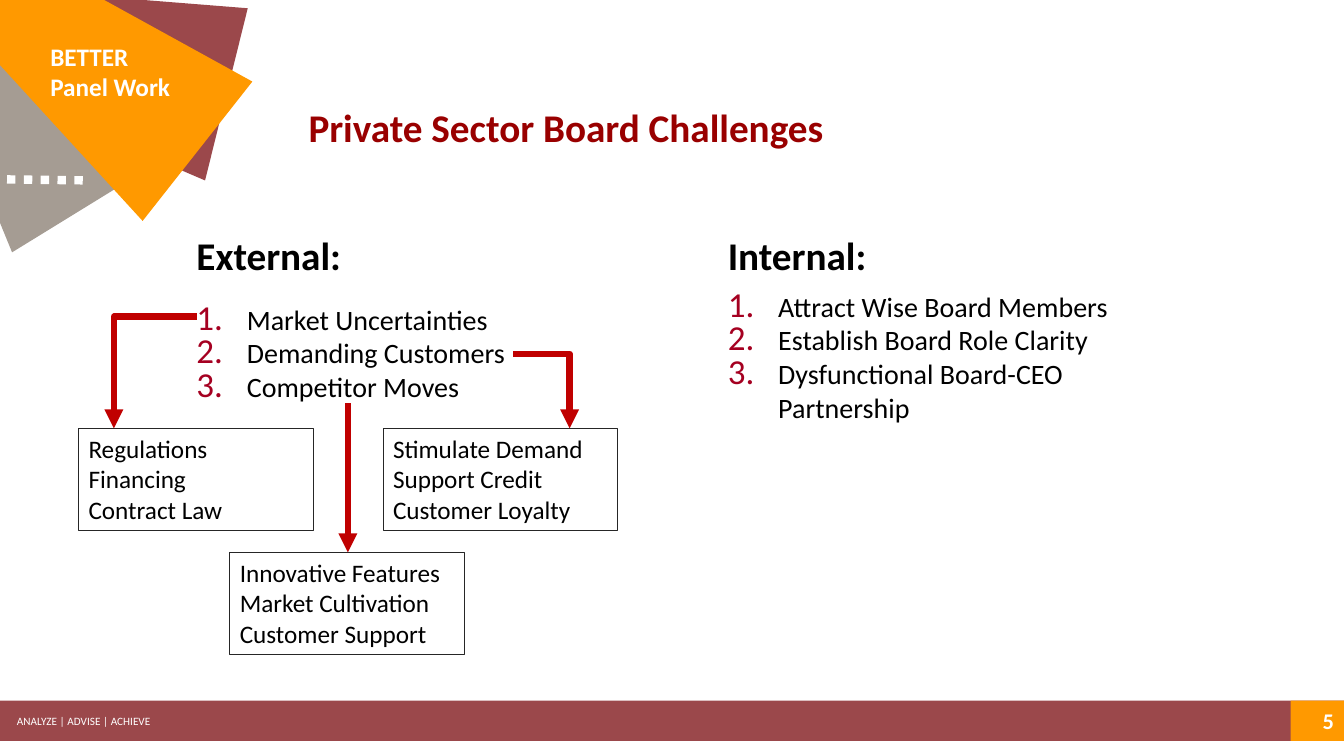
from dataclasses import dataclass

from lxml import etree
from pptx import Presentation
from pptx.dml.color import RGBColor
from pptx.enum import dml, shapes, text
from pptx.oxml.ns import qn
from pptx.util import Pt

PX = 9144  # 100 px to the inch


@dataclass(frozen=True)
class Theme:
    font: str = "Calibri"
    maroon: str = "9B484B"
    taupe: str = "A59C93"
    orange: str = "FF9900"
    title: str = "990000"
    number: str = "A50021"
    arrow: str = "C00000"
    border: str = "262626"
    black: str = "000000"
    white: str = "FFFFFF"
    heading_size: int = 28
    list_size: int = 20
    box_size: int = 18
    page_size: int = 16
    footer_size: int = 8


T = Theme()


def write(sp, lines, size, color, bold=False, wrap=True, numbered=False):
    """Fill a shape with left-aligned lines, one paragraph each."""
    tf = sp.text_frame
    tf.word_wrap = wrap
    tf.auto_size = text.MSO_AUTO_SIZE.SHAPE_TO_FIT_TEXT
    tf.vertical_anchor = text.MSO_ANCHOR.TOP
    for i, line in enumerate(lines):
        p = tf.add_paragraph() if i else tf.paragraphs[0]
        p.alignment = text.PP_ALIGN.LEFT
        if numbered:
            pPr = p._p.get_or_add_pPr()
            pPr.set("marL", str(50 * PX))
            pPr.set("indent", str(-50 * PX))
            clr = etree.SubElement(pPr, qn("a:buClr"))
            etree.SubElement(clr, qn("a:srgbClr"), val=T.number)
            etree.SubElement(pPr, qn("a:buSzPct"), val="125000")
            etree.SubElement(pPr, qn("a:buFont"), typeface=T.font)
            etree.SubElement(pPr, qn("a:buAutoNum"), type="arabicPeriod")
        r = p.add_run()
        r.text = line
        r.font.name, r.font.size, r.font.bold = T.font, Pt(size), bold
        r.font.color.rgb = RGBColor.from_string(color)


def style(sp, line=None, width=0.75, fill=None):
    """Set fill and outline and take the shadow away."""
    if fill:
        sp.shadow.inherit = False
        sp.fill.solid()
        sp.fill.fore_color.rgb = RGBColor.from_string(fill)
    else:
        etree.SubElement(sp._element.spPr, qn("a:effectLst"))
    if line:
        sp.line.color.rgb = RGBColor.from_string(line)
        sp.line.width = Pt(width)
    else:
        sp.line.fill.background()


prs = Presentation()
prs.slide_width, prs.slide_height = 1333 * PX, 750 * PX
s = prs.slides.add_slide(prs.slide_layouts[5])

# Footer band and corner ornament
band = s.shapes.add_shape(shapes.MSO_SHAPE.RECTANGLE, 0, 695 * PX, 1333 * PX, 40 * PX)
style(band, fill=T.maroon)
for x, y, angle, color in [
    (7, -72, 283.9, T.maroon),
    (-71, -43, 328.4, T.taupe),
    (3, -66, 308.2, T.orange),
]:
    sp = s.shapes.add_shape(shapes.MSO_SHAPE.TRAPEZOID, x * PX, y * PX, 176 * PX, 267 * PX)
    sp.rotation = angle
    style(sp, fill=color)
dots = s.shapes.add_connector(shapes.MSO_CONNECTOR.STRAIGHT, 7 * PX, 178 * PX, 89 * PX, 179 * PX)
style(dots, T.white, 6)
dots.line.dash_style = dml.MSO_LINE.ROUND_DOT

page = s.shapes.add_shape(shapes.MSO_SHAPE.RECTANGLE, 1280 * PX, 695 * PX, 53 * PX, 40 * PX)
style(page, fill=T.orange)
write(page, ["5"], T.page_size, T.white, bold=True)
page.text_frame.auto_size = text.MSO_AUTO_SIZE.NONE
page.text_frame.vertical_anchor = text.MSO_ANCHOR.MIDDLE
page.text_frame.paragraphs[0].alignment = text.PP_ALIGN.RIGHT

title = s.shapes.title
title.left, title.top, title.width, title.height = 296 * PX, 97 * PX, 537 * PX, 57 * PX
write(title, ["Private Sector Board Challenges"], T.heading_size, T.title, bold=True, wrap=False)

# Plain text: place, lines, size, colour, bold, wrap, numbered
for (x, y, w, h), *content in [
    ((40, 36, 145, 71), ["BETTER", "Panel Work"], T.box_size, T.white, True),
    ((7, 704, 259, 24), ["ANALYZE | ADVISE | ACHIEVE"], T.footer_size, T.white),
    ((185, 225, 176, 57), ["External:"], T.heading_size, T.black, True),
    ((712, 225, 176, 57), ["Internal:"], T.heading_size, T.black, True),
    ((185, 295, 463, 145),
     ["Market Uncertainties", "Demanding Customers", "Competitor Moves"],
     T.list_size, T.black, False, True, True),
    ((712, 282, 463, 178),
     ["Attract Wise Board Members", "Establish Board Role Clarity",
      "Dysfunctional Board-CEO Partnership"],
     T.list_size, T.black, False, True, True),
]:
    write(s.shapes.add_textbox(x * PX, y * PX, w * PX, h * PX), *content)

# Each external challenge points to a box of responses
for x, y, start, end_x, lines in [
    (78, 425, (195, 314), 113, ["Regulations", "Financing", "Contract Law"]),
    (380, 425, (509, 351), 565, ["Stimulate Demand", "Support Credit", "Customer Loyalty"]),
    (228, 548, (345, 400), 345, ["Innovative Features", "Market Cultivation", "Customer Support"]),
]:
    group = s.shapes.add_group_shape().shapes
    box = group.add_shape(shapes.MSO_SHAPE.RECTANGLE, x * PX, y * PX, 233 * PX, 101 * PX)
    style(box, T.border, fill=T.white)
    write(box, lines, T.box_size, T.black)
    bent = start[0] != end_x
    kind = shapes.MSO_CONNECTOR.ELBOW if bent else shapes.MSO_CONNECTOR.STRAIGHT
    arrow = group.add_connector(kind, start[0] * PX, start[1] * PX, end_x * PX, y * PX)
    if bent:  # one corner: across, then down
        arrow._element.spPr.find(qn("a:prstGeom")).set("prst", "bentConnector2")
    style(arrow, T.arrow, 4.5)
    etree.SubElement(arrow.line._get_or_add_ln(), qn("a:tailEnd"), type="triangle")

prs.save("out.pptx")
